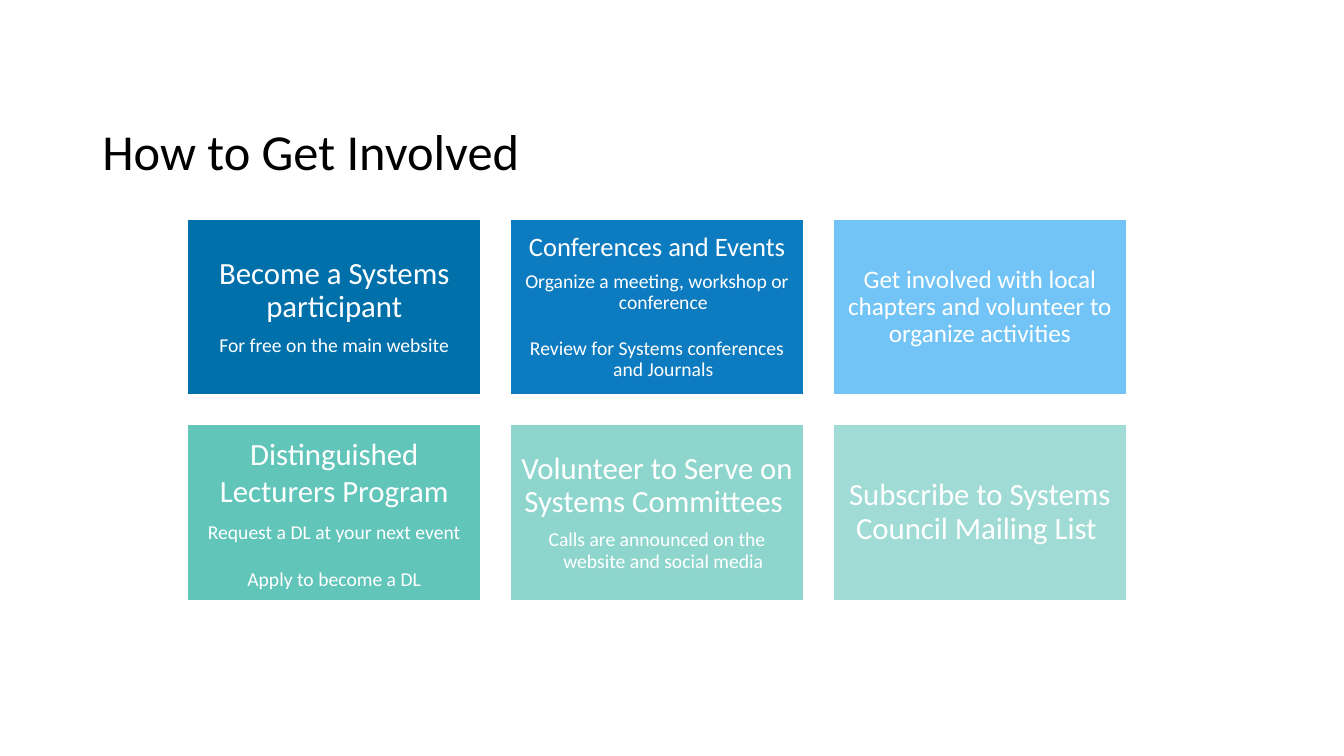
from pptx import Presentation
from pptx.dml.color import RGBColor
from pptx.enum.shapes import MSO_SHAPE
from pptx.enum.text import MSO_ANCHOR, PP_ALIGN
from pptx.util import Pt

WHITE = RGBColor(0xFF, 0xFF, 0xFF)
BLACK = RGBColor(0x00, 0x00, 0x00)
NAVY = RGBColor(0x00, 0x70, 0xAB)
BLUE = RGBColor(0x0D, 0x7B, 0xBF)
SKY = RGBColor(0x72, 0xC4, 0xF6)
TEAL = RGBColor(0x61, 0xC5, 0xBA)
MINT = RGBColor(0x8E, 0xD6, 0xCD)
PALE = RGBColor(0xA0, 0xDC, 0xD5)
FONT = "Calibri"

TITLE = "How to Get Involved"
CARDS = [
    (NAVY, 6.6, 0.9, 0, "Become a Systems participant", 22,
     [(7.7, "For free on the main website")]),
    (BLUE, 4.5, 0.9, 9, "Conferences and Events", 19,
     [(6.65, "Organize a meeting, workshop or conference"),
      (17.5, "Review for Systems conferences and Journals")]),
    (SKY, 5.4, 0.9, 0,
     "Get involved with local chapters and volunteer to organize activities",
     18, []),
    (TEAL, 6.6, 1.0, 0, "Distinguished Lecturers Program", 22,
     [(7.7, "Request a DL at your next event"),
      (17, "Apply to become a DL")]),
    (MINT, 4.5, 0.9, 9, "Volunteer to Serve on Systems Committees ", 22,
     [(7.7, "Calls are announced on the website and social media")]),
    (PALE, 6.6, 0.9, 0, "Subscribe to Systems Council Mailing List ", 22, []),
]
COLS = 3
LEFT, TOP = 134, 156.5
WIDE = 209.6
HIGH = WIDE * 0.6
GAP = WIDE * 0.1


def write(para, text, size, color, space):
    para.line_spacing = space
    run = para.add_run()
    run.text = text
    run.font.name = FONT
    run.font.size = Pt(size)
    run.font.color.rgb = color


def add_title(slide):
    box = slide.shapes.add_textbox(Pt(66), Pt(28.8), Pt(828), Pt(104.4))
    frame = box.text_frame
    frame.word_wrap = True
    frame.vertical_anchor = MSO_ANCHOR.BOTTOM
    write(frame.paragraphs[0], TITLE, 36, BLACK, 0.9)


def add_card(slide, index, card):
    fill, inset, space, hang, head, size, details = card
    row, col = divmod(index, COLS)
    box = slide.shapes.add_shape(
        MSO_SHAPE.RECTANGLE,
        Pt(LEFT + col * (WIDE + GAP)), Pt(TOP + row * (HIGH + GAP)),
        Pt(WIDE), Pt(HIGH))
    box.shadow.inherit = False
    box.fill.solid()
    box.fill.fore_color.rgb = fill
    box.line.color.rgb = WHITE
    box.line.width = Pt(1)
    frame = box.text_frame
    frame.word_wrap = True
    frame.vertical_anchor = MSO_ANCHOR.MIDDLE
    frame.margin_left = frame.margin_right = Pt(inset)
    frame.margin_top = frame.margin_bottom = Pt(inset)
    para = frame.paragraphs[0]
    para.alignment = PP_ALIGN.CENTER
    write(para, head, size, WHITE, space)
    for gap, text in details:
        para = frame.add_paragraph()
        para.alignment = PP_ALIGN.CENTER
        para.space_before = Pt(gap)
        if hang:
            para.level = 1
            props = para._p.get_or_add_pPr()
            props.set("marL", str(Pt(hang)))
            props.set("indent", str(-Pt(hang)))
        write(para, text, 14, WHITE, space)


def main():
    deck = Presentation()
    deck.slide_width, deck.slide_height = Pt(960), Pt(540)
    slide = deck.slides.add_slide(deck.slide_layouts[6])
    add_title(slide)
    for index, card in enumerate(CARDS):
        add_card(slide, index, card)
    deck.save("out.pptx")


if __name__ == "__main__":
    main()
